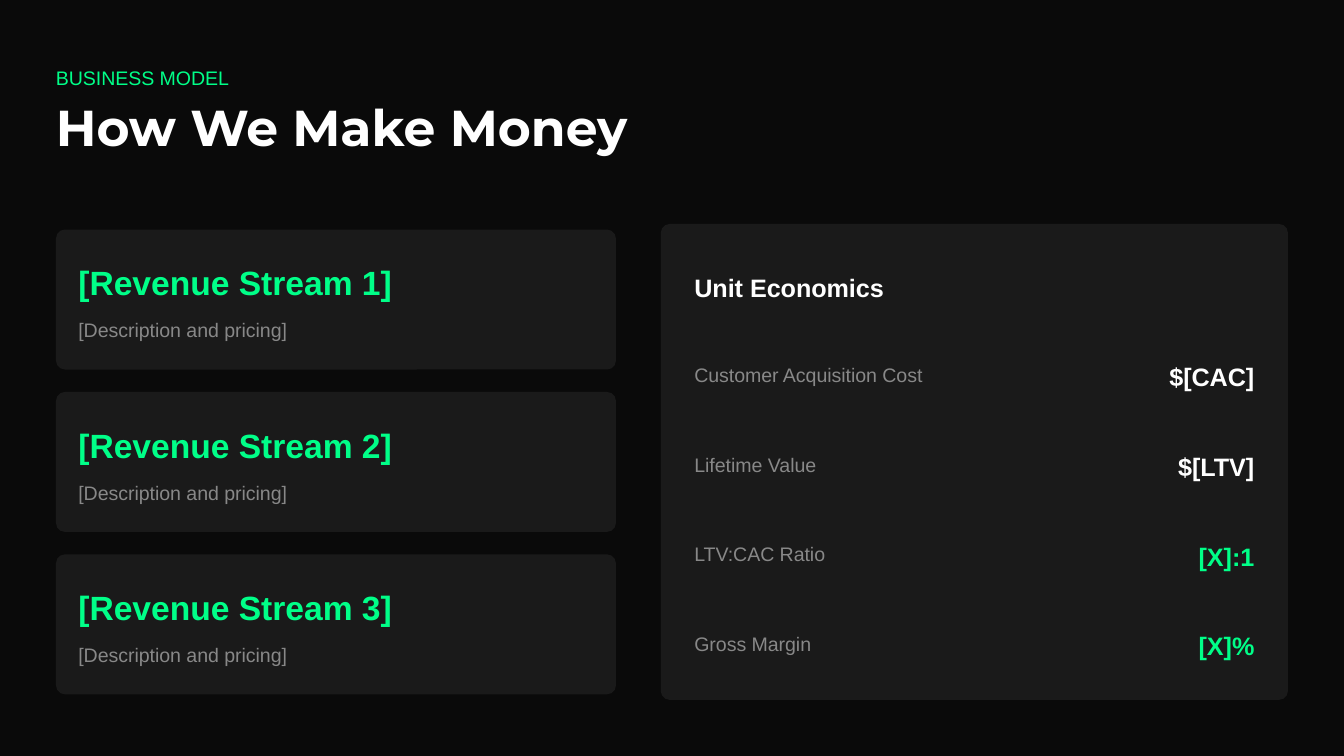
from dataclasses import dataclass

from pptx import Presentation
from pptx.dml.color import RGBColor
from pptx.enum.shapes import MSO_SHAPE
from pptx.enum.text import MSO_ANCHOR, MSO_AUTO_SIZE, PP_ALIGN
from pptx.util import Inches, Pt

LEFT, RIGHT = PP_ALIGN.LEFT, PP_ALIGN.RIGHT
TOP = MSO_ANCHOR.TOP
NO_AUTOFIT = MSO_AUTO_SIZE.NONE
ROUNDED = MSO_SHAPE.ROUNDED_RECTANGLE
TITLE_ONLY = 5

COLS, ROWS = 24, 13.5
CELL = 10 / COLS  # grid cells are square


@dataclass(frozen=True)
class Style:
    size: float
    color: str
    leading: float
    before: float = 3
    after: float = 3
    bold: bool = False
    font: str = "Arial"


class Theme:
    BACK, CARD = "0A0A0A", "1A1A1A"
    GREEN, WHITE, GRAY = "00FF88", "FFFFFF", "888888"
    EYEBROW = Style(10.5, GREEN, 15, after=6)
    TITLE = Style(27, WHITE, 30, before=0, after=24, bold=True, font="Montserrat")
    STREAM = Style(18, GREEN, 24, bold=True)
    DETAIL = Style(10.5, GRAY, 15, before=6)
    HEADING = Style(13.5, WHITE, 21, after=12, bold=True)
    LABEL = Style(10.5, GRAY, 15)
    VALUE = Style(13.5, WHITE, 21, bold=True)
    VALUE_GREEN = Style(13.5, GREEN, 21, bold=True)


def set_all(obj, values):
    for name, value in values.items():
        setattr(obj, name, value)


def grid(*cells):
    return [Inches(c * CELL) for c in cells]


def paint(fill, color):
    fill.solid()
    fill.fore_color.rgb = RGBColor.from_string(color)


class Deck:
    def __init__(self):
        self.prs = Presentation()
        self.prs.slide_width, self.prs.slide_height = grid(COLS, ROWS)
        self.s = self.prs.slides.add_slide(self.prs.slide_layouts[TITLE_ONLY])
        paint(self.s.background.fill, Theme.BACK)

    def fill_text(self, sp, text, style, align=LEFT):
        tf = sp.text_frame
        set_all(tf, dict(margin_left=0, margin_top=0, margin_right=0, margin_bottom=0,
                         word_wrap=True, auto_size=NO_AUTOFIT, vertical_anchor=TOP))
        p = tf.paragraphs[0]
        set_all(p, dict(alignment=align, line_spacing=Pt(style.leading),
                        space_before=Pt(style.before), space_after=Pt(style.after)))
        r = p.add_run()
        r.text = text
        set_all(r.font, dict(size=Pt(style.size), bold=style.bold, name=style.font))
        r.font.color.rgb = RGBColor.from_string(style.color)

    def title(self, x, y, w, h, text):
        sp = self.s.shapes.title
        set_all(sp, dict(zip(("left", "top", "width", "height"), grid(x, y, w, h))))
        self.fill_text(sp, text, Theme.TITLE)

    def text(self, x, y, w, h, text, style, align=LEFT):
        self.fill_text(self.s.shapes.add_textbox(*grid(x, y, w, h)), text, style, align)

    def card(self, x, y, w, h, radius=0.16):
        sp = self.s.shapes.add_shape(ROUNDED, *grid(x, y, w, h))
        sp.adjustments[0] = radius / min(w, h)
        sp.shadow.inherit = False
        sp.line.fill.background()
        paint(sp.fill, Theme.CARD)

    def stream(self, y, name, detail):
        self.card(1, y, 10, 2.5)
        self.text(1.4, y + 0.5, 9.4, 0.8, name, Theme.STREAM)
        self.text(1.4, y + 1.5, 9.4, 0.5, detail, Theme.DETAIL)

    def metric(self, y, label, label_w, value, value_w, style):
        self.text(12.4, y + 0.1, label_w, 0.5, label, Theme.LABEL)
        self.text(22.4 - value_w, y, value_w, 0.7, value, style, RIGHT)


def main():
    deck = Deck()
    deck.text(1, 1.1, 22.44, 0.5, "BUSINESS MODEL", Theme.EYEBROW)
    deck.title(1, 1.8, 11.25, 1, "How We Make Money")

    for i in range(3):
        deck.stream(4.1 + 2.9 * i, f"[Revenue Stream {i + 1}]", "[Description and pricing]")

    deck.card(11.8, 4, 11.2, 8.5)
    deck.text(12.4, 4.7, 10.2, 0.7, "Unit Economics", Theme.HEADING)
    metrics = [
        ("Customer Acquisition Cost", 4.18, "$[CAC]", 1.56, Theme.VALUE),
        ("Lifetime Value", 2.24, "$[LTV]", 1.4, Theme.VALUE),
        ("LTV:CAC Ratio", 2.4, "[X]:1", 1.03, Theme.VALUE_GREEN),
        ("Gross Margin", 2.14, "[X]%", 1.03, Theme.VALUE_GREEN),
    ]
    for i, row in enumerate(metrics):
        deck.metric(6.3 + 1.6 * i, *row)

    deck.prs.save("out.pptx")


if __name__ == "__main__":
    main()
